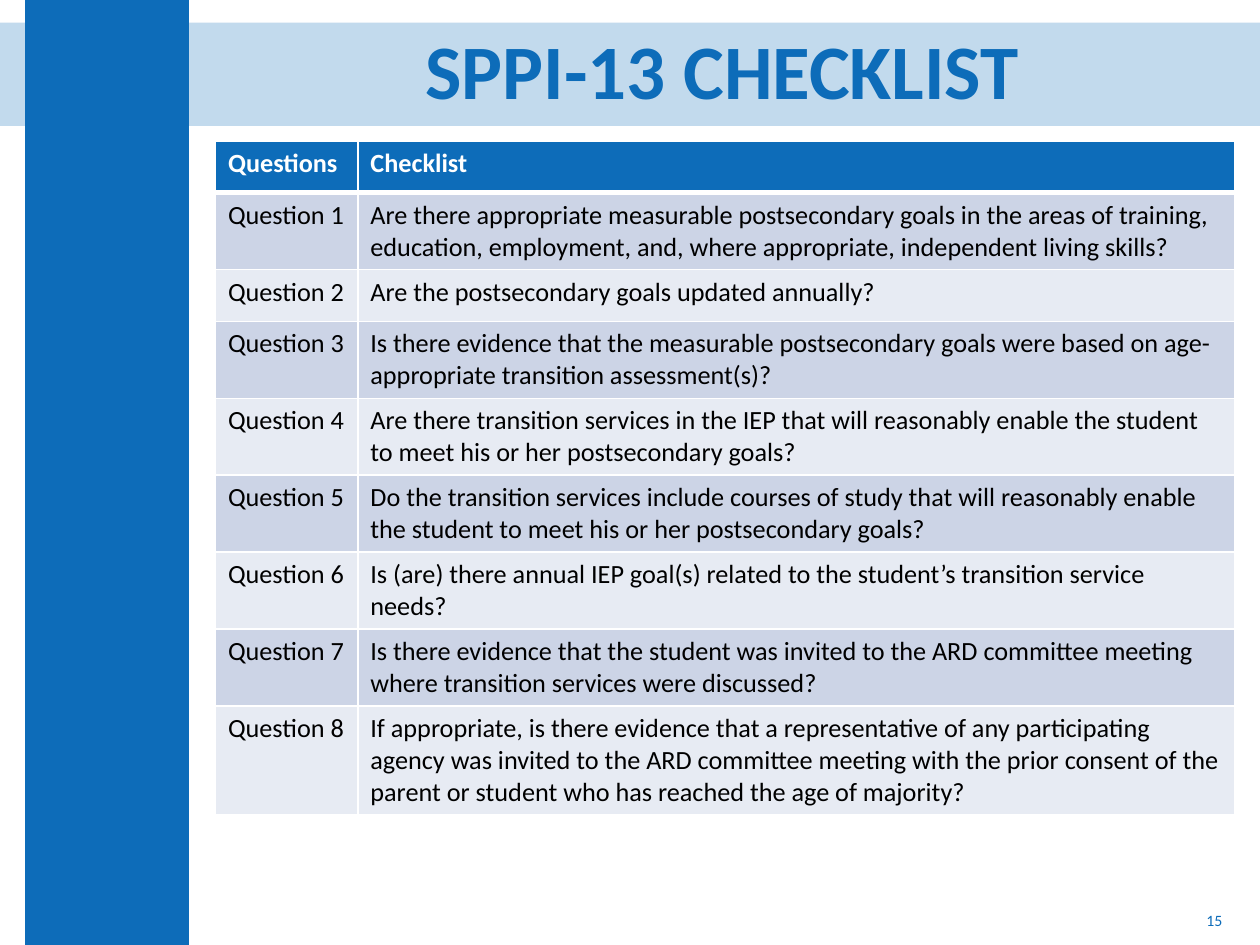
from dataclasses import dataclass

from lxml.etree import SubElement
from pptx import Presentation
from pptx.dml.color import RGBColor
from pptx.enum.shapes import MSO_SHAPE as Shape
from pptx.enum.text import MSO_ANCHOR as Anchor, MSO_AUTO_SIZE as AutoSize, PP_ALIGN as Align
from pptx.oxml.ns import qn
from pptx.util import Inches, Pt


@dataclass(frozen=True)
class Theme:
    font: str = "Calibri"
    blue: str = "0D6CB9"
    white: str = "FFFFFF"
    black: str = "000000"
    odd_row: str = "CCD4E6"
    even_row: str = "E7EBF3"
    title_size: float = 44
    table_size: float = 15
    number_size: float = 9


CHECKLIST = [
    "Are there appropriate measurable postsecondary goals in the areas of training, "
    "education, employment, and, where appropriate, independent living skills?",
    "Are the postsecondary goals updated annually?",
    "Is there evidence that the measurable postsecondary goals were based on "
    "age-appropriate transition assessment(s)?",
    "Are there transition services in the IEP that will reasonably enable the student "
    "to meet his or her postsecondary goals?",
    "Do the transition services include courses of study that will reasonably enable "
    "the student to meet his or her postsecondary goals?",
    "Is (are) there annual IEP goal(s) related to the student’s transition service needs?",
    "Is there evidence that the student was invited to the ARD committee meeting "
    "where transition services were discussed?",
    "If appropriate, is there evidence that a representative of any participating "
    "agency was invited to the ARD committee meeting with the prior consent of the "
    "parent or student who has reached the age of majority?",
]


def write_text(frame, text, *, font, size, color, bold=False,
               align=Align.LEFT, anchor=Anchor.TOP, line_spacing=None):
    frame.word_wrap = True
    frame.vertical_anchor = anchor
    para = frame.paragraphs[0]
    para.alignment = align
    para.line_spacing = line_spacing
    span = para.add_run()
    span.text = text
    span.font.name = font
    span.font.size = Pt(size)
    span.font.bold = bold
    span.font.color.rgb = RGBColor.from_string(color)


def set_border(cell, side, color, width):
    line = SubElement(cell._tc.get_or_add_tcPr(), qn(f"a:ln{side}"), w=str(Pt(width)))
    fill = SubElement(line, qn("a:solidFill"))
    SubElement(fill, qn("a:srgbClr"), val=color)


class SlideBuilder:
    def __init__(self, slide, theme):
        self.slide = slide
        self.theme = theme

    def band(self, left, top, width, height, opacity=100):
        box = self.slide.shapes.add_shape(
            Shape.RECTANGLE, Inches(left), Inches(top), Inches(width), Inches(height))
        box.shadow.inherit = False
        box.line.fill.background()
        box.fill.solid()
        box.fill.fore_color.rgb = RGBColor.from_string(self.theme.blue)
        if opacity < 100:
            color = box._element.spPr.find(f".//{qn('a:srgbClr')}")
            SubElement(color, qn("a:alpha"), val=str(opacity * 1000))

    def title(self, text, left, top, width, height):
        box = self.slide.shapes.title
        box.left, box.top = Inches(left), Inches(top)
        box.width, box.height = Inches(width), Inches(height)
        box.text_frame.auto_size = AutoSize.NONE
        write_text(box.text_frame, text, font=self.theme.font, size=self.theme.title_size,
                   color=self.theme.blue, bold=True, align=Align.CENTER,
                   anchor=Anchor.MIDDLE, line_spacing=0.9)
        # Bring the title in front of the bands
        self.slide.shapes._spTree.append(box._element)

    def page_number(self, text, left, top, width, height):
        box = self.slide.shapes.add_textbox(
            Inches(left), Inches(top), Inches(width), Inches(height))
        write_text(box.text_frame, text, font=self.theme.font, size=self.theme.number_size,
                   color=self.theme.blue, align=Align.RIGHT, anchor=Anchor.MIDDLE)

    def table(self, rows, left, top, column_widths, row_height):
        table = self.slide.shapes.add_table(
            len(rows), len(column_widths), Inches(left), Inches(top),
            Inches(sum(column_widths)), Inches(row_height * len(rows))).table
        for column, width in zip(table.columns, column_widths):
            column.width = Inches(width)
        for index, texts in enumerate(rows):
            table.rows[index].height = Inches(row_height)
            for cell, text in zip(table.rows[index].cells, texts):
                self.cell(cell, text, index)

    def cell(self, cell, text, index):
        theme = self.theme
        header = index == 0
        # A heavier rule parts the header from the questions
        widths = {"L": 1, "R": 1, "T": 3 if index == 1 else 1, "B": 3 if header else 1}
        for side, width in widths.items():
            set_border(cell, side, theme.white, width)
        color = theme.blue if header else theme.odd_row if index % 2 else theme.even_row
        cell.fill.solid()
        cell.fill.fore_color.rgb = RGBColor.from_string(color)
        write_text(cell.text_frame, text, font=theme.font, size=theme.table_size,
                   color=theme.white if header else theme.black, bold=header)


def main():
    deck = Presentation()
    deck.slide_width, deck.slide_height = Inches(10), Inches(7.5)
    title_only = deck.slide_layouts[5]
    page = SlideBuilder(deck.slides.add_slide(title_only), Theme())

    # Background bands
    page.band(0, 0.18, 10, 0.82, opacity=25)
    page.band(0.2, 0, 1.3, 7.5)

    # Page number and title
    page.page_number("15", 7.55, 7.1, 2.25, 0.4)
    page.title("SPPI-13 CHECKLIST", 1.47, 0.18, 8.53, 0.82)

    # Checklist table
    questions = [(f"Question {number}", text) for number, text in enumerate(CHECKLIST, 1)]
    page.table([("Questions", "Checklist")] + questions, 1.71, 1.12, (1.13, 6.96), 0.41)

    deck.save("out.pptx")


if __name__ == "__main__":
    main()
